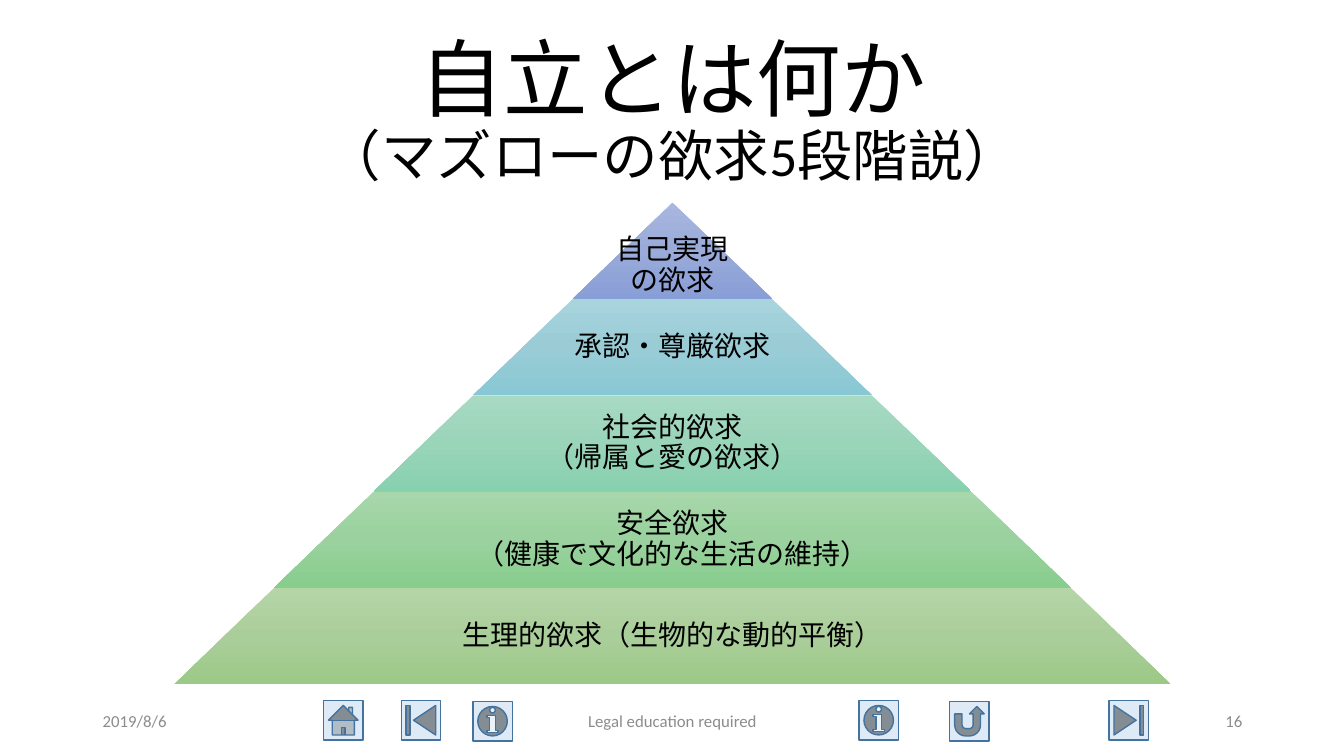
import copy
import pptx
import pptx.util
import pptx.dml.color
import pptx.enum.shapes
import pptx.enum.text

Inches = pptx.util.Inches
SHAPE = pptx.enum.shapes.MSO_SHAPE
ALIGN = pptx.enum.text.PP_ALIGN
RGB = pptx.dml.color.RGBColor.from_string

THEME = {
    "font": "Calibri",
    "ink": "000000",
    "muted": "8C8C8C",
    "button": "DEEBF7",
    "edge": "43739E",
    "title": 60.3,
    "sub": 39.6,
    "tier": 20,
    "foot": 12,
    "tints": [
        ("A8B7DF", "9AABD9", "889ED7"),
        ("A8D4DD", "9ACCD6", "88C8D4"),
        ("A8DAC3", "9AD4B9", "87D1AF"),
        ("A7D7AB", "9AD19E", "87CD8C"),
        ("B5D5A7", "AACE9A", "9CC987"),
    ],
}

deck = pptx.Presentation()
deck.slide_width, deck.slide_height = Inches(13.33), Inches(7.5)
slide = deck.slides.add_slide(deck.slide_layouts[6])


def add_form(kind, left, top, width, height):
    form = slide.shapes.add_shape(
        kind, Inches(left), Inches(top), Inches(width), Inches(height))
    form.shadow.inherit = False
    return form


def add_label(box, lines, color, align, space=1.0, inset=None):
    """Add a text box; lines holds (text, size) pairs joined by line breaks."""
    frame = slide.shapes.add_textbox(*map(Inches, box)).text_frame
    look = {"word_wrap": True,
            "vertical_anchor": pptx.enum.text.MSO_ANCHOR.MIDDLE}
    if inset is not None:
        for side in ("left", "right", "top", "bottom"):
            look["margin_" + side] = Inches(inset)
    for name, value in look.items():
        setattr(frame, name, value)
    para = frame.paragraphs[0]
    para.alignment, para.line_spacing = align, space
    for row, (text, size) in enumerate(lines):
        if row:
            para.add_line_break()
        run = para.add_run()
        run.text = text
        for name, value in {"name": THEME["font"],
                            "size": pptx.util.Pt(size)}.items():
            setattr(run.font, name, value)
        run.font.color.rgb = RGB(color)
    return frame


# Navigation buttons
buttons = [
    (SHAPE.ACTION_BUTTON_HOME, 3.21, 6.95),
    (SHAPE.ACTION_BUTTON_BEGINNING, 3.98, 6.95),
    (SHAPE.ACTION_BUTTON_END, 11, 6.95),
    (SHAPE.ACTION_BUTTON_INFORMATION, 8.52, 6.95),
    (SHAPE.ACTION_BUTTON_RETURN, 9.42, 6.96),
    (SHAPE.ACTION_BUTTON_INFORMATION, 4.69, 6.96),
]
for kind, left, top in buttons:
    button = add_form(kind, left, top, 0.39, 0.39)
    button.fill.solid()
    button.fill.fore_color.rgb = RGB(THEME["button"])
    button.line.color.rgb = RGB(THEME["edge"])
    button.line.width = pptx.util.Pt(1)

# Title
add_label((0.92, 0.4, 11.5, 1.45),
          [("自立とは何か", THEME["title"]),
           ("（マズローの欲求5段階説）", THEME["sub"])],
          THEME["ink"], ALIGN.CENTER, 0.9)

# Footer
for left, width, text, align in [
    (0.92, 3, "2019/8/6", ALIGN.LEFT),
    (4.42, 4.5, "Legal education required", ALIGN.CENTER),
    (9.42, 3, "16", ALIGN.RIGHT),
]:
    add_label((left, 6.95, width, 0.4), [(text, THEME["foot"])],
              THEME["muted"], align)

# Pyramid: each tier is one step wider than the one above
tiers = [
    ("自己実現", "の欲求"),
    ("承認・尊厳欲求",),
    ("社会的欲求", "（帰属と愛の欲求）"),
    ("安全欲求", "（健康で文化的な生活の維持）"),
    ("生理的欲求（生物的な動的平衡）",),
]
mid, peak, step = 6.67, 2.01, 1.976
high = 4.78 / len(tiers)
for rank, (words, tints) in enumerate(zip(tiers, THEME["tints"])):
    top, width = peak + rank * high, step * (rank + 1)
    tier = add_form(SHAPE.TRAPEZOID, mid - width / 2, top, width, high)
    tier.adjustments[0] = step / 2 / high
    tier.line.fill.background()
    tier.fill.gradient()
    tier.fill.gradient_angle = 270
    stops = tier._element.spPr.xpath(".//a:gsLst")[0]
    stops.append(copy.deepcopy(stops[-1]))
    for place, (stop, tint) in enumerate(zip(tier.fill.gradient_stops, tints)):
        stop.color.rgb = RGB(tint)
        stop.position = place / 2

    span = width * 0.65 if rank else width
    frame = add_label((mid - span / 2, top, span, high),
                      [(word, THEME["tier"]) for word in words],
                      THEME["ink"], ALIGN.CENTER, 0.9, 0.03)
    if rank == 0:
        frame.margin_top = Inches(0.33)  # keep the words in the wide part

deck.save("out.pptx")
